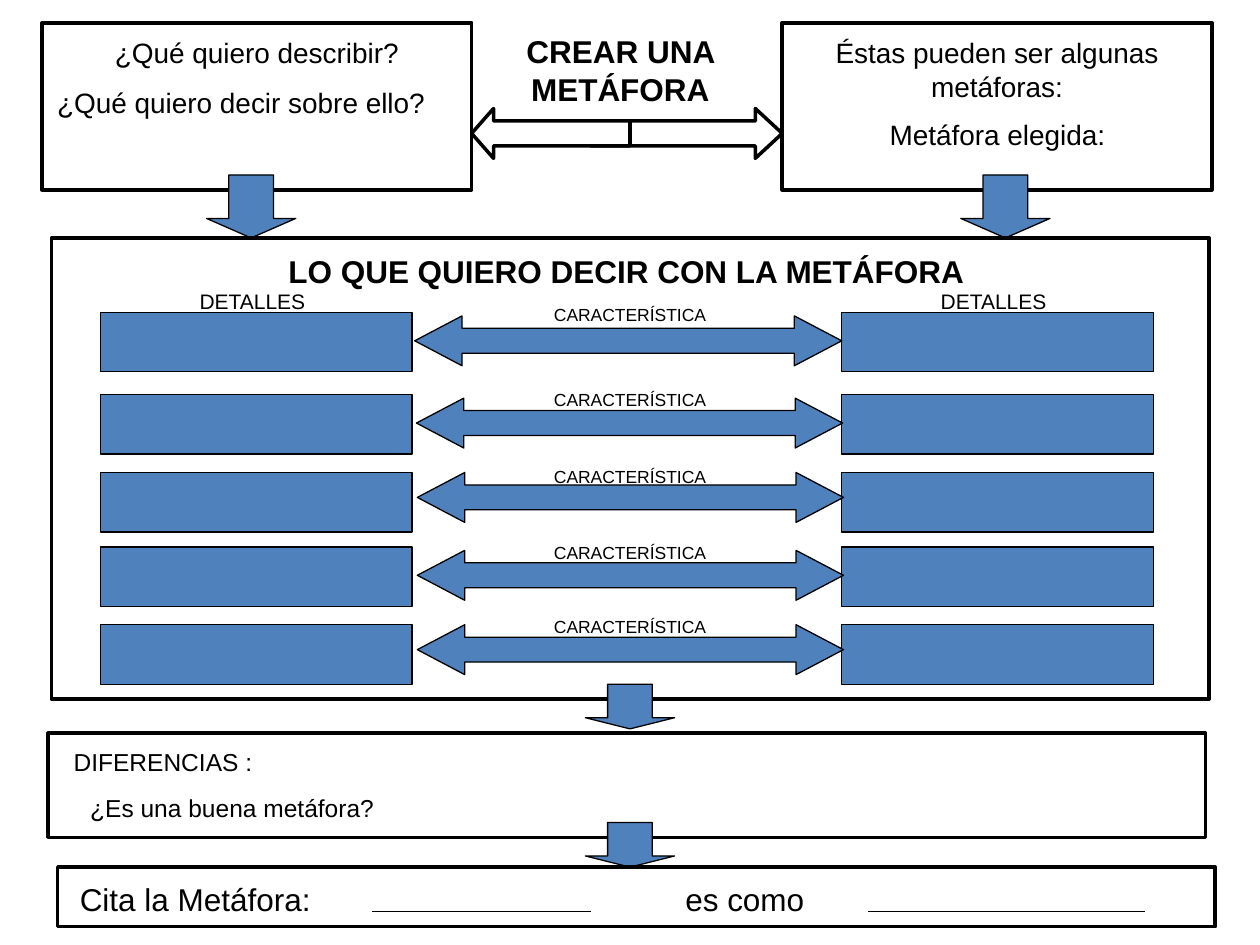
from lxml import etree
from pptx import Presentation
from pptx.dml.color import RGBColor
from pptx.enum.shapes import MSO_CONNECTOR, MSO_SHAPE
from pptx.enum.text import PP_ALIGN
from pptx.oxml.ns import qn
from pptx.util import Pt

BLACK = RGBColor(0x00, 0x00, 0x00)
WHITE = RGBColor(0xFF, 0xFF, 0xFF)
BLUE = RGBColor(0x4F, 0x81, 0xBD)
FONT = "Arial"

RECT = MSO_SHAPE.RECTANGLE
DOWN = MSO_SHAPE.DOWN_ARROW
LEFT = MSO_SHAPE.LEFT_ARROW
RIGHT = MSO_SHAPE.RIGHT_ARROW
BOTH = MSO_SHAPE.LEFT_RIGHT_ARROW
STRAIGHT = MSO_CONNECTOR.STRAIGHT
START = PP_ALIGN.LEFT
MID = PP_ALIGN.CENTER

# Tops of bar, arrow and label; left edge and width of the arrow
ROWS = [
    (178.5, 180.5, 170, 237, 244),
    (225.5, 227.5, 219, 238, 243.5),
    (270, 270, 263, 238.5, 243.5),
    (312.5, 314.5, 306, 238.5, 243.5),
    (357, 357, 348.5, 238.5, 243.5),
]
BARS = (57.5, 481)


def add_form(slide, kind, x, y, w, h, fill, weight, head=None):
    """Add a preset shape; head is the length of an arrow's head."""
    form = slide.shapes.add_shape(kind, Pt(x), Pt(y), Pt(w), Pt(h))
    form.shadow.inherit = False
    form.fill.solid()
    form.fill.fore_color.rgb = fill
    form.line.color.rgb = BLACK
    form.line.width = Pt(weight)
    if head is not None:
        form.adjustments[0] = 0.5
        form.adjustments[1] = head


def add_frame(slide, x, y, w, h):
    add_form(slide, RECT, x, y, w, h, WHITE, 2)


def add_down(slide, x, y, h, head):
    add_form(slide, DOWN, x, y, 51, h, BLUE, 0.75, head)


def add_text(slide, text, x, y, w, h, size, align=MID, bold=False):
    box = slide.shapes.add_textbox(Pt(x), Pt(y), Pt(w), Pt(h))
    box.text_frame.word_wrap = True
    para = box.text_frame.paragraphs[0]
    para.alignment = align
    run = para.add_run()
    run.text = text
    run.font.name = FONT
    run.font.size = Pt(size)
    run.font.bold = bold
    run.font.color.rgb = BLACK
    return para


def set_tab(para, place):
    props = para._p.get_or_add_pPr()
    tabs = etree.SubElement(props, qn("a:tabLst"))
    etree.SubElement(tabs, qn("a:tab"), pos=str(Pt(place)), algn="l")


def add_blank(slide, x, end, y):
    """Add a line to write on."""
    line = slide.shapes.add_connector(STRAIGHT, Pt(x), Pt(y), Pt(end), Pt(y))
    line.line.color.rgb = BLACK
    line.line.width = Pt(0.75)
    etree.SubElement(line._element.spPr, qn("a:effectLst"))


def add_top(slide):
    for x in (24, 447):
        add_frame(slide, x, 13, 245.5, 95.5)
    add_form(slide, RIGHT, 337.5, 62, 109.5, 28.5, WHITE, 2, 0.54)
    add_form(slide, LEFT, 269.5, 62, 90.5, 28.5, WHITE, 2, 0.44)
    for x in (118, 549):
        add_down(slide, x, 100, 36, 0.31)
    add_text(slide, "CREAR UNA METÁFORA", 269.5, 15, 170, 51, 18, bold=True)
    add_text(slide, "¿Qué quiero describir?", 24, 17, 245.5, 26.5, 16)
    add_text(slide, "¿Qué quiero decir sobre ello?", 15, 45.5, 245.5, 26.5, 16)
    add_text(slide, "Éstas pueden ser algunas metáforas:",
             454.5, 17, 230.5, 46, 16)
    add_text(slide, "Metáfora elegida:", 449, 63.5, 242, 26.5, 16)


def add_middle(slide):
    add_frame(slide, 29.5, 136, 661.5, 263.5)
    add_text(slide, "LO QUE QUIERO DECIR CON LA METÁFORA",
             57.5, 140.5, 601, 29, 18, bold=True)
    for bar, arrow, label, x, w in ROWS:
        for left in BARS:
            add_form(slide, RECT, left, bar, 178, 34, BLUE, 0.75)
        add_form(slide, BOTH, x, arrow, w, 28.5, BLUE, 0.75, 0.95)
        add_text(slide, "CARACTERÍSTICA", 288, label, 144, 19.5, 10)
    for left in BARS:
        add_text(slide, "DETALLES", left, 161.5, 173.5, 21.5, 12)
    add_down(slide, 334.5, 391, 25.5, 0.25)


def add_bottom(slide):
    add_frame(slide, 27.5, 419, 661.5, 59.5)
    add_down(slide, 334.5, 470, 25.5, 0.25)
    add_frame(slide, 33, 495.5, 661.5, 34)
    add_text(slide, "DIFERENCIAS :", 35, 423.5, 163, 24.5, 14, START)
    add_text(slide, "¿Es una buena metáfora?", 44.5, 449.5, 237.5, 24.5, 14,
             START)
    quote = add_text(slide, "Cita la Metáfora:\tes como",
                     38.5, 499.5, 635, 29, 18, START)
    set_tab(quote, 346)
    add_blank(slide, 212.5, 337.5, 521)
    add_blank(slide, 496, 654.5, 521)


def main():
    deck = Presentation()
    deck.slide_width, deck.slide_height = Pt(720), Pt(540)
    slide = deck.slides.add_slide(deck.slide_layouts[6])
    add_top(slide)
    add_middle(slide)
    add_bottom(slide)
    deck.save("out.pptx")


if __name__ == "__main__":
    main()
